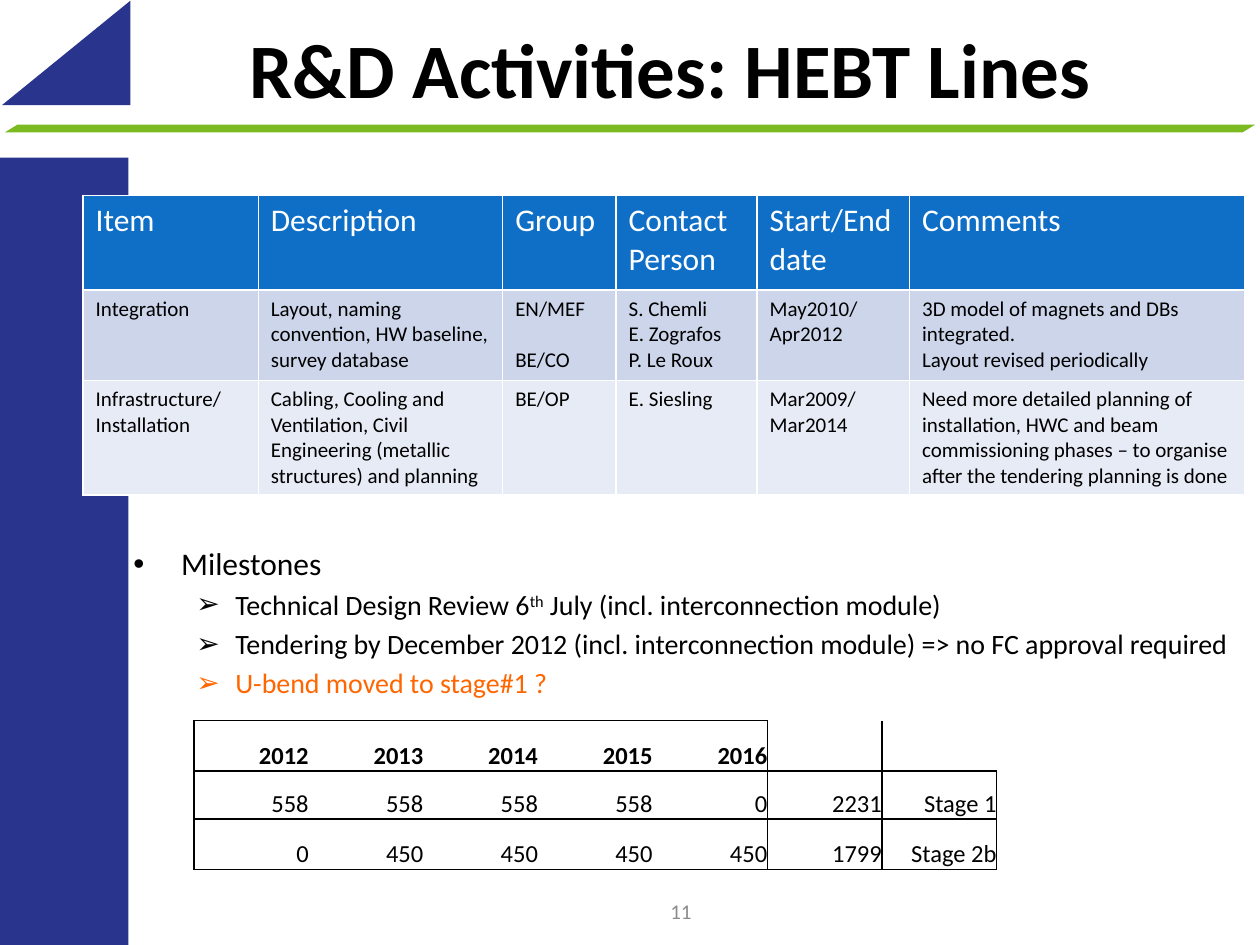
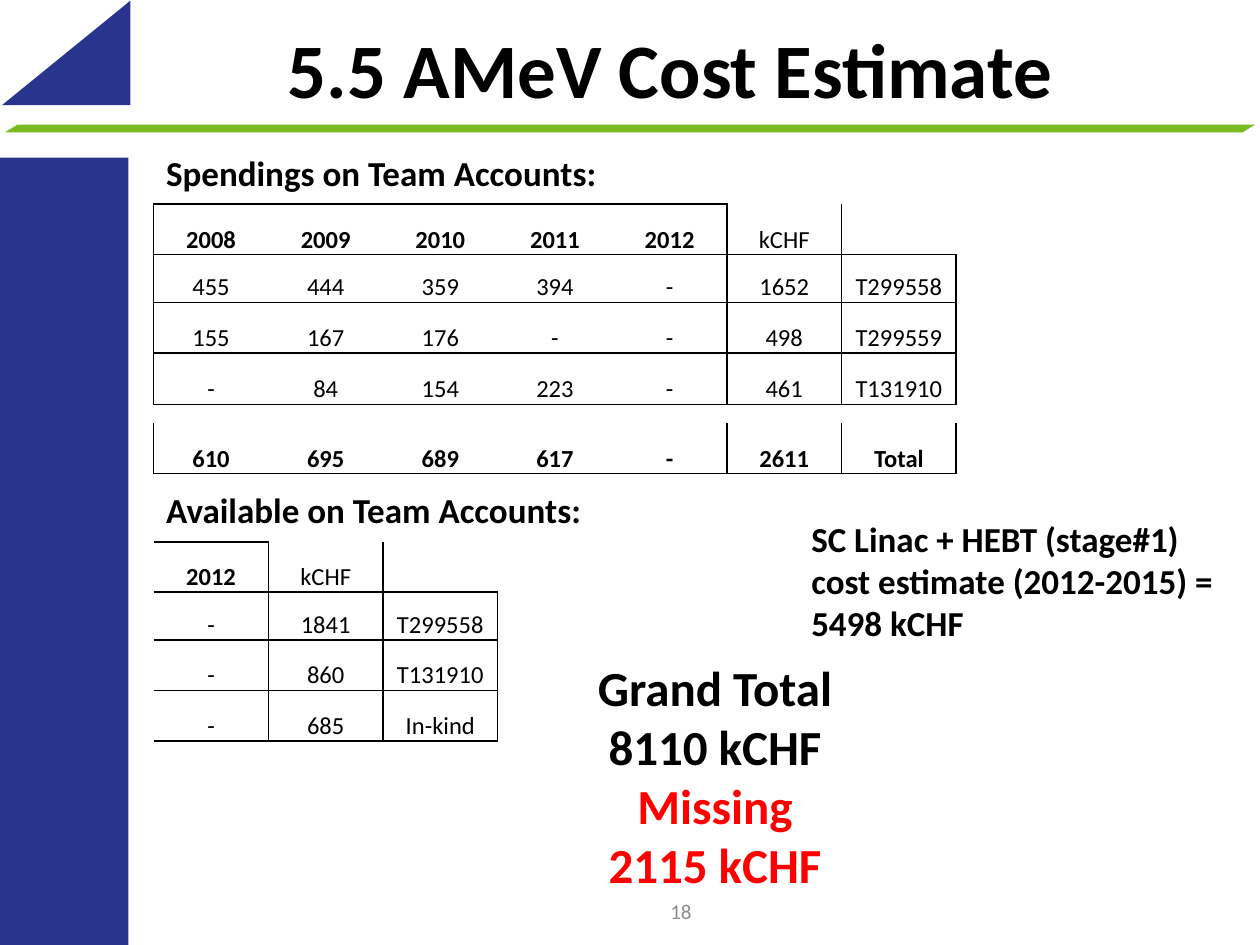
from lxml import etree
from pptx import Presentation
from pptx.dml.color import RGBColor
from pptx.enum.shapes import MSO_SHAPE
from pptx.enum.text import MSO_ANCHOR, PP_ALIGN
from pptx.oxml.ns import qn
from pptx.util import Inches, Pt

FONT = "Calibri"
BLACK = RGBColor(0x00, 0x00, 0x00)
WHITE = RGBColor(0xFF, 0xFF, 0xFF)
GRAY = RGBColor(0x8C, 0x8C, 0x8C)
NAVY = RGBColor(0x29, 0x34, 0x8C)
GREEN = RGBColor(0x7B, 0xBA, 0x21)
BLUE = RGBColor(0x0F, 0x6F, 0xC6)
BAND_DARK = RGBColor(0xCC, 0xD5, 0xEA)
BAND_LIGHT = RGBColor(0xE7, 0xEB, 0xF5)
ORANGE = RGBColor(0xFF, 0x66, 0x00)
RED = RGBColor(0xFF, 0x00, 0x00)

LEFT, CENTER, RIGHT = PP_ALIGN.LEFT, PP_ALIGN.CENTER, PP_ALIGN.RIGHT
TOP, MIDDLE, BOTTOM = MSO_ANCHOR.TOP, MSO_ANCHOR.MIDDLE, MSO_ANCHOR.BOTTOM
PLAIN_TABLE_STYLE = "{2D5ABB26-0587-4C30-8999-92F81FD0307C}"

# Content: HEBT lines
ACTIVITIES = [
    ["Item", "Description", "Group", "Contact Person", "Start/End date", "Comments"],
    ["Integration", "Layout, naming convention, HW baseline, survey database",
     "EN/MEF\nBE/CO", "S. Chemli\nE. Zografos\nP. Le Roux", "May2010/Apr2012",
     "3D model of magnets and DBs integrated.\nLayout revised periodically"],
    ["Infrastructure/Installation",
     "Cabling, Cooling and Ventilation, Civil Engineering (metallic structures) and planning",
     "BE/OP", "E. Siesling", "Mar2009/Mar2014",
     "Need more detailed planning of installation, HWC and beam commissioning phases"
     " – to organise after the tendering planning is done"],
]
ACTIVITY_WIDTHS = [1.39, 1.94, 0.9, 1.12, 1.21, 2.66]
ACTIVITY_HEIGHTS = [0.75, 0.72, 0.91]

# Level, text pieces (every second piece is superscript), colour
MILESTONES = [
    (0, ["Milestones"], BLACK),
    (1, ["Technical Design Review 6", "th", " July (incl. interconnection module)"], BLACK),
    (1, ["Tendering by December 2012 (incl. interconnection module)"
         " => no FC approval required"], BLACK),
    (1, ["U-bend moved to stage#1 ?"], ORANGE),
]
# Per level: bullet, text indent, hanging indent, size
LEVELS = [("•", 0.38, 0.38, 18), ("➢", 0.81, 0.31, 16)]

STAGES = [
    ["2012", "2013", "2014", "2015", "2016", "", ""],
    ["558", "558", "558", "558", "0", "2231", "Stage 1"],
    ["0", "450", "450", "450", "450", "1799", "Stage 2b"],
]

# Content: cost estimate
SPENDINGS = [
    ["2008", "2009", "2010", "2011", "2012", "kCHF", ""],
    ["455", "444", "359", "394", "-", "1652", "T299558"],
    ["155", "167", "176", "-", "-", "498", "T299559"],
]
SPENDINGS_EXTRA = [["-", "84", "154", "223", "-", "461", "T131910"]]
SPENDINGS_TOTAL = [["610", "695", "689", "617", "-", "2611", "Total"]]
AVAILABLE = [
    ["2012", "kCHF", ""],
    ["-", "1841", "T299558"],
    ["-", "860", "T131910"],
]
AVAILABLE_EXTRA = [["-", "685", "In-kind"]]
STAGE_COST = "SC Linac + HEBT (stage#1) cost estimate (2012-2015) = 5498 kCHF"
GRAND_TOTAL = [("Grand Total", BLACK), ("8110 kCHF", BLACK),
               ("Missing", RED), ("2115 kCHF", RED)]

MARGIN = 1.22
AMOUNT_WIDTH = 0.91
AMOUNT_HEIGHTS = [0.4, 0.38, 0.4]


def style_span(span, size, color=BLACK, bold=False):
    span.font.name = FONT
    span.font.size = Pt(size)
    span.font.bold = bold
    span.font.color.rgb = color


def add_text(slide, at, lines, size, bold=False, align=LEFT, anchor=TOP, wrap=True):
    """Add a text box; lines are (text, colour) pairs."""
    box = slide.shapes.add_textbox(*map(Inches, at))
    frame = box.text_frame
    frame.word_wrap = wrap
    frame.vertical_anchor = anchor
    frame.text = "\n".join(text for text, _ in lines)
    for para, (_, color) in zip(frame.paragraphs, lines):
        para.alignment = align
        style_span(para.runs[0], size, color, bold)


def add_band(slide, kind, at, color):
    band = slide.shapes.add_shape(kind, *map(Inches, at))
    band.shadow.inherit = False
    band.fill.solid()
    band.fill.fore_color.rgb = color
    band.line.fill.background()
    return band


def add_page(deck, title, number):
    """Add a blank slide with the shared bands, title and page number."""
    slide = deck.slides.add_slide(deck.slide_layouts[6])
    add_band(slide, MSO_SHAPE.RECTANGLE, (0, 1.25, 1.02, 6.25), NAVY)
    corner = add_band(slide, MSO_SHAPE.RIGHT_TRIANGLE, (0.11, -0.09, 0.83, 1.02), NAVY)
    corner.rotation = 270
    rule = add_band(slide, MSO_SHAPE.PARALLELOGRAM, (0.04, 0.99, 9.92, 0.06), GREEN)
    rule.adjustments[0] = 1.625
    add_text(slide, (1.14, 0, 8.36, 1.07), [(title, BLACK)], 44, True, CENTER, MIDDLE)
    add_text(slide, (4.24, 7.03, 2.33, 0.4), [(str(number), GRAY)], 12,
             align=CENTER, anchor=MIDDLE)
    return slide


def add_plain_table(slide, left, top, widths, heights):
    """Add an unstyled table with the given column widths and row heights."""
    frame = slide.shapes.add_table(len(heights), len(widths), Inches(left), Inches(top),
                                   Inches(sum(widths)), Inches(sum(heights)))
    table = frame.table
    table.first_row = table.horz_banding = False
    table._tbl.tblPr.find(qn("a:tableStyleId")).text = PLAIN_TABLE_STYLE
    for column, width in zip(table.columns, widths):
        column.width = Inches(width)
    for row, height in zip(table.rows, heights):
        row.height = Inches(height)
    return table


def set_borders(cell, sides, color):
    """Draw 1 pt lines on the named sides; call before the cell is filled."""
    properties = cell._tc.get_or_add_tcPr()
    for side in "LRTB":
        if side in sides:
            line = etree.SubElement(properties, qn("a:ln" + side), w=str(Pt(1)))
            fill = etree.SubElement(line, qn("a:solidFill"))
            etree.SubElement(fill, qn("a:srgbClr"), val=str(color))


def style_cell(cell, text, size, color=BLACK, bold=False, align=LEFT):
    cell.text = text
    for para in cell.text_frame.paragraphs:
        para.alignment = align
        for span in para.runs:
            style_span(span, size, color, bold)


def add_activities(slide):
    table = add_plain_table(slide, 0.66, 1.55, ACTIVITY_WIDTHS, ACTIVITY_HEIGHTS)
    row_styles = [(BLUE, 18, WHITE), (BAND_DARK, 12, BLACK), (BAND_LIGHT, 12, BLACK)]
    for r, (texts, (band, size, color)) in enumerate(zip(ACTIVITIES, row_styles)):
        for c, text in enumerate(texts):
            cell = table.cell(r, c)
            set_borders(cell, "LRTB", WHITE)
            cell.fill.solid()
            cell.fill.fore_color.rgb = band
            style_cell(cell, text, size, color)
    # One line of space between the two groups
    table.cell(1, 2).text_frame.paragraphs[1].space_before = Pt(14.6)


def add_milestones(slide):
    box = slide.shapes.add_textbox(*map(Inches, (0.96, 4.27, 9, 1.45)))
    frame = box.text_frame
    frame.word_wrap = True
    for index, (level, pieces, color) in enumerate(MILESTONES):
        para = frame.add_paragraph() if index else frame.paragraphs[0]
        bullet, indent, hanging, size = LEVELS[level]
        para.level = level
        if index:
            para.space_before = Pt(0.2 * size)
        properties = para._p.get_or_add_pPr()
        properties.set("marL", str(Inches(indent)))
        properties.set("indent", str(-Inches(hanging)))
        etree.SubElement(properties, qn("a:buFont"), typeface="Arial")
        etree.SubElement(properties, qn("a:buChar"), char=bullet)
        for position, piece in enumerate(pieces):
            span = para.add_run()
            span.text = piece
            style_span(span, size, color)
            if position % 2:
                span.font._element.set("baseline", "30000")


def add_amounts(slide, left, top, rows, align=CENTER, header=True, bold=False,
                left_line=True):
    """Add year columns in one frame, then a boxed sum and a boxed label column."""
    columns = len(rows[0])
    years = columns - 2
    table = add_plain_table(slide, left, top, [AMOUNT_WIDTH] * columns,
                            AMOUNT_HEIGHTS[:len(rows)])
    for r, texts in enumerate(rows):
        heading = header and r == 0
        for c, text in enumerate(texts):
            cell = table.cell(r, c)
            cell.margin_left = cell.margin_right = 0
            cell.margin_top = cell.margin_bottom = 0
            cell.vertical_anchor = BOTTOM
            sides = ""
            if (c == 0 and left_line) or c == years or (c > years and not heading):
                sides += "L"
            if c == years - 1 or (c >= years and not heading):
                sides += "R"
            if (heading and c < years) or (header and r == 1):
                sides += "T"
            if heading or r == len(rows) - 1:
                sides += "B"
            set_borders(cell, sides, BLACK)
            style_cell(cell, text, 14, bold=bold or (heading and c < years), align=align)


def build_hebt_lines(deck):
    slide = add_page(deck, "R&D Activities: HEBT Lines", 11)
    add_activities(slide)
    add_milestones(slide)
    add_amounts(slide, 1.54, 5.72, STAGES, align=RIGHT)


def build_cost_estimate(deck):
    slide = add_page(deck, "5.5 AMeV Cost Estimate", 18)
    for top, heading in [(1.15, "Spendings on Team Accounts:"),
                         (3.83, "Available on Team Accounts:")]:
        add_text(slide, (MARGIN, top, 5.2, 0.44), [(heading, BLACK)], 20, True)
    add_amounts(slide, MARGIN, 1.62, SPENDINGS)
    add_amounts(slide, MARGIN, 2.81, SPENDINGS_EXTRA, header=False)
    add_amounts(slide, MARGIN, 3.36, SPENDINGS_TOTAL, header=False, bold=True)
    add_amounts(slide, MARGIN, 4.3, AVAILABLE, left_line=False)
    add_amounts(slide, MARGIN, 5.48, AVAILABLE_EXTRA, header=False, left_line=False)
    add_text(slide, (6.34, 4.06, 3.39, 1.11), [(STAGE_COST, BLACK)], 20, True)
    add_text(slide, (4.61, 5.17, 2.13, 1.99), GRAND_TOTAL, 28, True, CENTER, wrap=False)


def main():
    deck = Presentation()
    deck.slide_width, deck.slide_height = Inches(10), Inches(7.5)
    build_hebt_lines(deck)
    build_cost_estimate(deck)
    deck.save("out.pptx")


if __name__ == "__main__":
    main()
